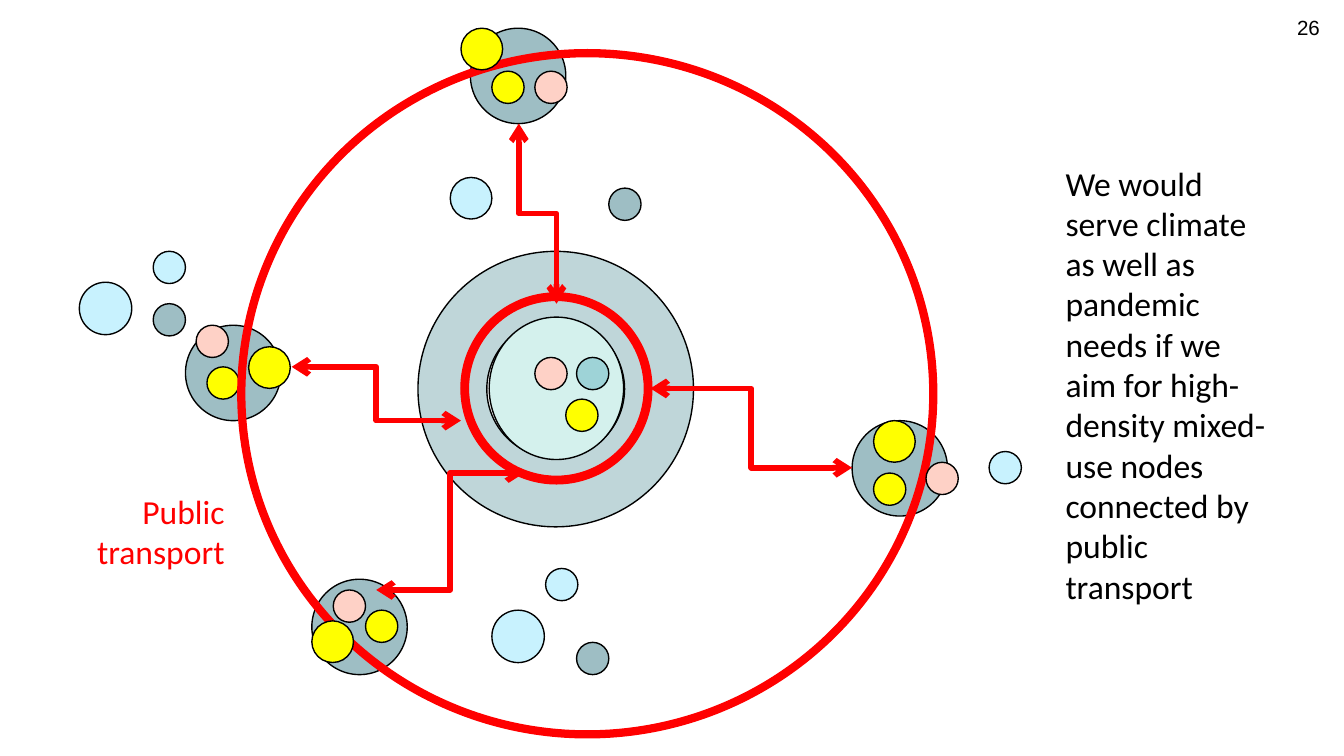
from dataclasses import dataclass

from lxml import etree
from pptx import Presentation
from pptx.dml.color import RGBColor
from pptx.enum.shapes import MSO_CONNECTOR, MSO_SHAPE
from pptx.enum.text import MSO_AUTO_SIZE, PP_ALIGN
from pptx.oxml.ns import qn
from pptx.slide import Slide
from pptx.util import Inches, Pt

OVAL = MSO_SHAPE.OVAL
DONUT = MSO_SHAPE.DONUT
ELBOW = MSO_CONNECTOR.ELBOW
FIT_TEXT = MSO_AUTO_SIZE.SHAPE_TO_FIT_TEXT
NO_FIT = MSO_AUTO_SIZE.NONE
LEFT = PP_ALIGN.LEFT
RIGHT = PP_ALIGN.RIGHT

BLACK = RGBColor(0x00, 0x00, 0x00)
RED = RGBColor(0xFF, 0x00, 0x00)
YELLOW = RGBColor(0xFF, 0xFF, 0x00)
PINK = RGBColor(0xFE, 0xD1, 0xC6)
SKY = RGBColor(0xC8, 0xF2, 0xFE)
SLATE = RGBColor(0x9E, 0xBE, 0xC4)
TEAL = RGBColor(0x9E, 0xD3, 0xD7)
MINT = RGBColor(0xD4, 0xF1, 0xED)
MIST = RGBColor(0xBF, 0xD6, 0xD9)

PAGE_WIDTH = 10
PAGE_HEIGHT = PAGE_WIDTH * 9 / 16
SMALL, MEDIUM, LARGE, NODE = 0.24, 0.31, 0.39, 0.71


@dataclass(frozen=True)
class Circle:
    left: float
    top: float
    width: float
    color: RGBColor
    height: float | None = None
    outline: RGBColor = BLACK
    ring: float | None = None


@dataclass(frozen=True)
class Route:
    start: tuple[float, float]
    end: tuple[float, float]
    rotation: int = 0


@dataclass(frozen=True)
class Label:
    text: str
    left: float
    top: float
    width: float
    height: float
    color: RGBColor = BLACK
    font: str = "Calibri"
    size: int = 18
    align: PP_ALIGN = LEFT
    fit: MSO_AUTO_SIZE = FIT_TEXT


SETTLEMENTS = [
    *(Circle(x, y, NODE, SLATE)
      for x, y in [(6.34, 3.13), (2.32, 4.31), (3.5, 0.21), (1.38, 2.42)]),
    *(Circle(x, y, LARGE, SKY) for x, y in [(0.59, 2.1), (3.66, 4.54)]),
    Circle(3.35, 1.32, MEDIUM, SKY),
    *(Circle(x, y, SMALL, SKY) for x, y in [(4.06, 4.23), (1.14, 1.87), (7.36, 3.36)]),
    *(Circle(x, y, SMALL, SLATE) for x, y in [(1.14, 2.26), (4.29, 4.78), (4.53, 1.4)]),
    Circle(3.11, 1.87, 2.05, MIST, ring=0.25),
]

ROUTES = [
    Route((4.84, 2.89), (6.34, 3.48)),
    Route((3.9, 3.52), (2.8, 4.39)),
    Route((4.67, 1.45), (3.33, 1.73), rotation=270),
    Route((2.17, 2.73), (3.43, 3.13)),
]

CENTRES = [
    Circle(3.64, 2.36, 1, MINT, height=1.06),
    Circle(3.43, 2.18, 1.42, RED, outline=RED, ring=0.039),
    *(Circle(x, y, SMALL, YELLOW)
      for x, y in [(6.5, 3.52), (2.72, 4.54), (1.54, 2.73), (3.66, 0.53), (4.21, 2.97)]),
    Circle(1.77, 0.37, 5.2, RED, height=5.12, outline=RED, ring=0.01),
    *(Circle(x, y, SMALL, PINK)
      for x, y in [(3.98, 2.66), (3.98, 0.53), (2.48, 4.39), (6.89, 3.44), (1.46, 2.42)]),
    Circle(4.29, 2.66, SMALL, TEAL),
    *(Circle(x, y, MEDIUM, YELLOW)
      for x, y in [(6.5, 3.13), (2.32, 4.62), (1.85, 2.58), (3.43, 0.21)]),
]

LABELS = [
    Label("26", 9.46, 0.06, 0.46, 0.19, font="Arial", size=11, align=RIGHT, fit=NO_FIT),
    Label("We would serve climate as well as pandemic needs if we aim for "
          "high-density mixed-use nodes connected by public transport",
          7.83, 1.16, 1.73, 3.43),
    Label("Public transport", 0.51, 3.6, 1.26, 0.71, color=RED, align=RIGHT),
]


def draw_circle(slide: Slide, circle: Circle) -> None:
    outline_form = OVAL if circle.ring is None else DONUT
    disc = slide.shapes.add_shape(
        outline_form, Inches(circle.left), Inches(circle.top),
        Inches(circle.width), Inches(circle.height or circle.width))
    if circle.ring is not None:
        disc.adjustments[0] = circle.ring
    disc.shadow.inherit = False
    disc.fill.solid()
    disc.fill.fore_color.rgb = circle.color
    disc.line.color.rgb = circle.outline
    disc.line.width = Pt(0.75)


def draw_route(slide: Slide, route: Route) -> None:
    link = slide.shapes.add_connector(
        ELBOW, *(Inches(value) for value in route.start + route.end))
    link.line.color.rgb = RED
    link.line.width = Pt(3)
    properties = link._element.spPr
    if route.rotation:
        properties.find(qn("a:xfrm")).set("rot", str(route.rotation * 60000))
    stroke = properties.find(qn("a:ln"))
    for arrowhead in ("a:headEnd", "a:tailEnd"):
        etree.SubElement(stroke, qn(arrowhead), type="arrow")
    etree.SubElement(properties, qn("a:effectLst"))


def draw_label(slide: Slide, label: Label) -> None:
    box = slide.shapes.add_textbox(
        Inches(label.left), Inches(label.top), Inches(label.width), Inches(label.height))
    frame = box.text_frame
    frame.word_wrap = True
    frame.auto_size = label.fit
    paragraph = frame.paragraphs[0]
    paragraph.text = label.text
    paragraph.alignment = label.align
    paragraph.font.name = label.font
    paragraph.font.size = Pt(label.size)
    paragraph.font.color.rgb = label.color


def main() -> None:
    presentation = Presentation()
    presentation.slide_width = Inches(PAGE_WIDTH)
    presentation.slide_height = Inches(PAGE_HEIGHT)
    slide = presentation.slides.add_slide(presentation.slide_layouts[6])
    for settlement in SETTLEMENTS:
        draw_circle(slide, settlement)
    for route in ROUTES:
        draw_route(slide, route)
    for centre in CENTRES:
        draw_circle(slide, centre)
    for label in LABELS:
        draw_label(slide, label)
    presentation.save("out.pptx")


if __name__ == "__main__":
    main()
